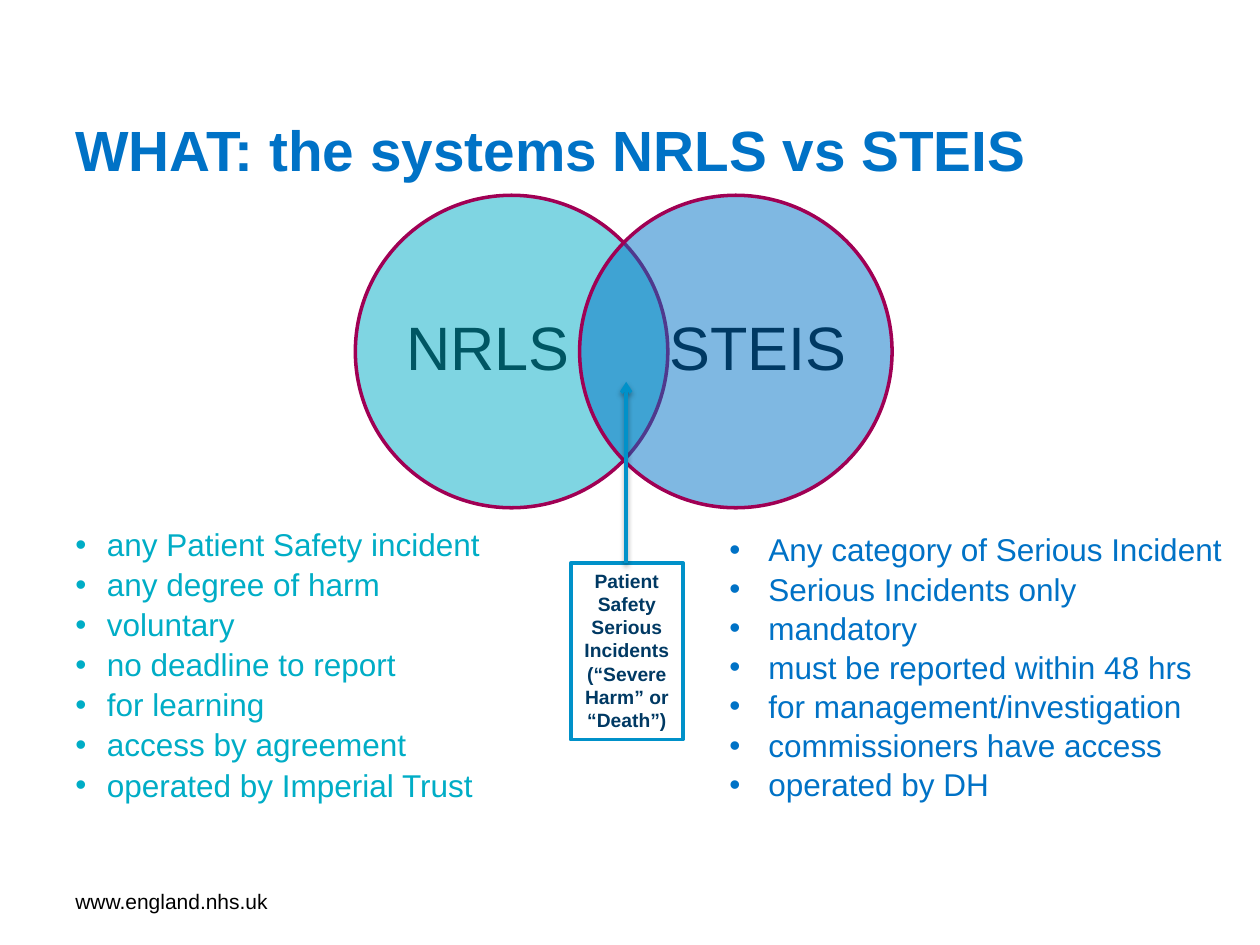
from lxml import etree
from pptx import Presentation
from pptx.dml.color import RGBColor
from pptx.enum.shapes import MSO_CONNECTOR, MSO_SHAPE
from pptx.enum.text import MSO_ANCHOR, PP_ALIGN
from pptx.oxml.ns import qn
from pptx.util import Inches, Pt

LINE = MSO_CONNECTOR.STRAIGHT
OVAL, RECT = MSO_SHAPE.OVAL, MSO_SHAPE.RECTANGLE
TOP, MIDDLE = MSO_ANCHOR.TOP, MSO_ANCHOR.MIDDLE
LEFT, CENTER = PP_ALIGN.LEFT, PP_ALIGN.CENTER

BLACK = RGBColor(0x00, 0x00, 0x00)
AQUA = RGBColor(0x00, 0xAD, 0xC6)
BLUE = RGBColor(0x00, 0x72, 0xC6)
TEAL = RGBColor(0x00, 0x56, 0x63)
NAVY = RGBColor(0x00, 0x39, 0x63)
PLUM = RGBColor(0xA0, 0x00, 0x54)
SKY = RGBColor(0x00, 0x91, 0xC9)


def add_sub(parent, tag, **attrs):
    return etree.SubElement(parent, qn(tag), attrs)


def write(shape, text, size, color, bold=False, align=LEFT, anchor=MIDDLE,
          indent=None, spacing=None, after=None):
    frame = shape.text_frame
    frame.word_wrap = True
    frame.vertical_anchor = anchor
    frame.text = text
    for para in frame.paragraphs:
        if indent:
            props = para._p.get_or_add_pPr()
            props.set("marL", str(Inches(indent)))
            props.set("indent", str(-Inches(indent)))
            add_sub(props, "a:buFont", typeface="Arial")
            add_sub(props, "a:buChar", char="•")
        para.alignment = align
        if spacing:
            para.line_spacing = spacing
        if after:
            para.space_after = Pt(after)
        for run in para.runs:
            run.font.name = "Arial"
            run.font.size = Pt(size)
            run.font.bold = bold
            run.font.color.rgb = color


prs = Presentation()
prs.slide_width, prs.slide_height = Inches(10), Inches(7.5)
slide = prs.slides.add_slide(prs.slide_layouts[6])
shapes = slide.shapes

# Footer and title
foot = shapes.add_textbox(Inches(0.5), Inches(6.95), Inches(2.33), Inches(0.4))
write(foot, "www.england.nhs.uk", 12, BLACK)
title = shapes.add_textbox(Inches(0.5), Inches(0.82), Inches(8.05), Inches(0.73))
write(title, "WHAT: the systems NRLS vs STEIS", 32.4, BLUE, bold=True)

# Overlapping circles with their labels
for name, left, label_left, fill, color in (
        ("NRLS", 2.82, 3.16, AQUA, TEAL),
        ("STEIS", 4.6, 5.3, BLUE, NAVY)):
    circle = shapes.add_shape(OVAL, Inches(left), Inches(1.55),
                              Inches(2.48), Inches(2.48))
    circle.shadow.inherit = False
    circle.fill.solid()
    circle.fill.fore_color.rgb = fill
    tint = circle._element.spPr.find(qn("a:solidFill"))[0]
    add_sub(tint, "a:alpha", val="50000")
    circle.line.color.rgb = PLUM
    circle.line.width = Pt(2)

    label = shapes.add_textbox(Inches(label_left), Inches(1.84),
                               Inches(1.43), Inches(1.89))
    frame = label.text_frame
    frame.margin_left = frame.margin_right = 0
    frame.margin_top = frame.margin_bottom = 0
    write(label, name, 35, color, align=CENTER, spacing=0.9)

# Box that names the overlap
box = shapes.add_shape(RECT, Inches(4.53), Inches(4.47), Inches(0.89), Inches(1.4))
box.shadow.inherit = False
box.fill.background()
box.line.color.rgb = SKY
box.line.width = Pt(2.25)
write(box, "Patient Safety Serious Incidents\n(“Severe Harm” or “Death”)",
      11, NAVY, bold=True, align=CENTER, anchor=TOP)

# Bullet lists
nrls = ["any Patient Safety incident", "any degree of harm", "voluntary",
        "no deadline to report", "for learning", "access by agreement",
        "operated by Imperial Trust"]
steis = ["Any category of Serious Incident", "Serious Incidents only",
         "mandatory", "must be reported within 48 hrs",
         "for management/investigation", "commissioners have access",
         "operated by DH"]
left_list = shapes.add_textbox(Inches(0.5), Inches(4.15), Inches(4.57), Inches(2.63))
write(left_list, "\n".join(nrls), 18, AQUA, anchor=TOP,
      indent=0.25, spacing=0.9, after=3.5)
right_list = shapes.add_textbox(Inches(5.69), Inches(4.16), Inches(4.43), Inches(2.52))
write(right_list, "\n".join(steis), 18, BLUE, anchor=TOP, indent=0.31, after=0.8)

# Arrow from the box into the overlap, with a soft shadow
arrow = shapes.add_connector(LINE, Inches(4.97), Inches(4.47),
                             Inches(4.97), Inches(3.03))
arrow.line.color.rgb = SKY
arrow.line.width = Pt(2)
add_sub(arrow.line._get_or_add_ln(), "a:tailEnd", type="arrow")
effects = add_sub(arrow._element.spPr, "a:effectLst")
shade = add_sub(effects, "a:outerShdw", blurRad=str(Pt(3.1)), dist=str(Pt(1.6)),
                dir="5400000", rotWithShape="0")
black = add_sub(shade, "a:srgbClr", val="000000")
add_sub(black, "a:alpha", val="38000")

prs.save("out.pptx")
